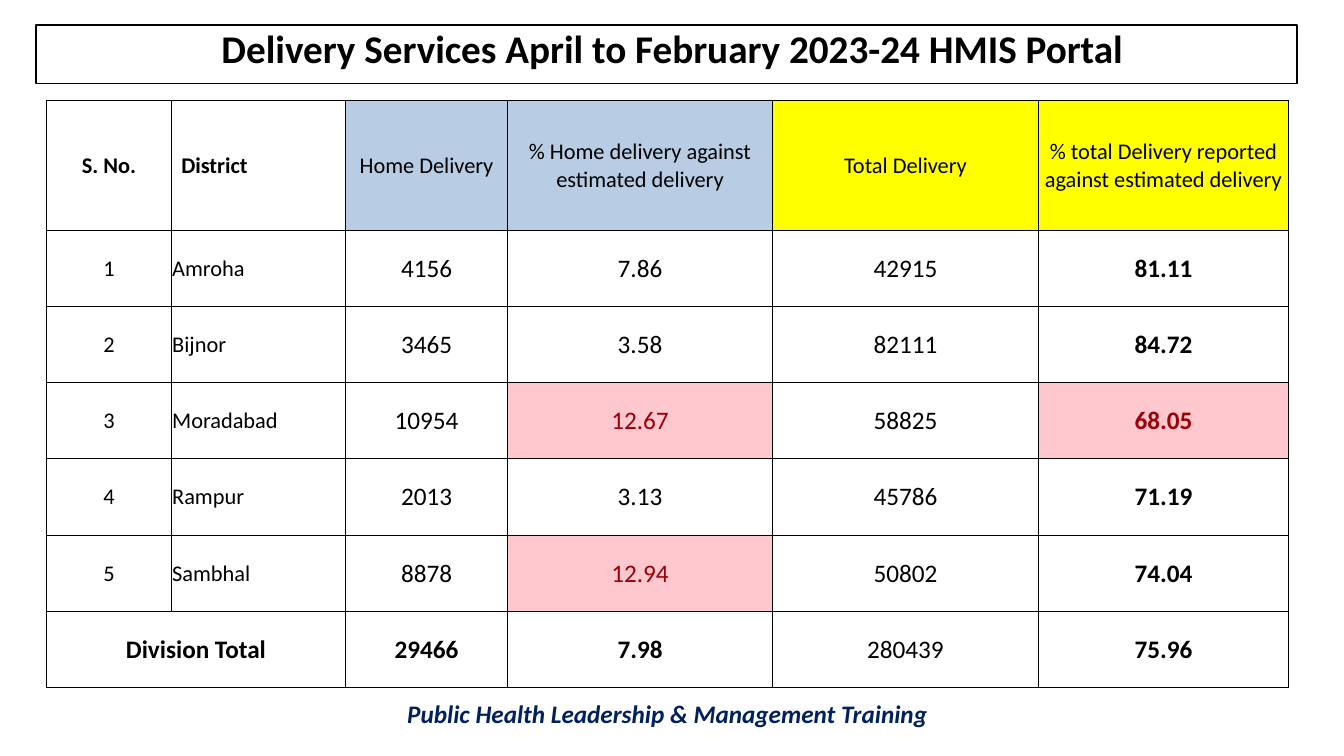
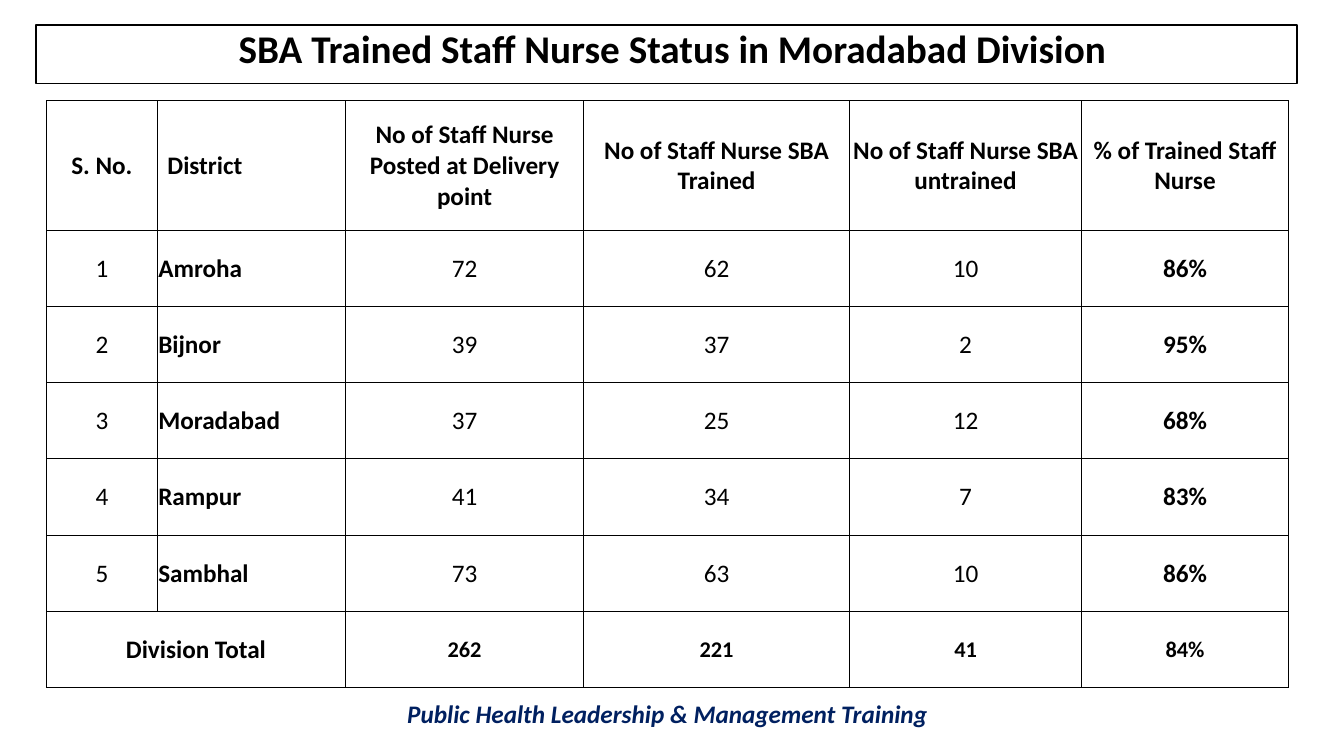
from lxml.etree import SubElement as Sub
from pptx import Presentation
from pptx.dml.color import RGBColor as Rgb
from pptx.enum.shapes import MSO_SHAPE as Shape
from pptx.enum.text import MSO_ANCHOR as Anchor, MSO_AUTO_SIZE as Fit, PP_ALIGN as Align
from pptx.oxml.ns import qn
from pptx.util import Cm, Pt

HUES = {"ink": "000000", "paper": "FFFFFF", "navy": "002060", "blue": "B8CCE4",
        "gold": "FFFF00", "pink": "FFC7CE", "red": "9C0006"}
FACE = "Calibri"
TITLE = (1.7, 0.43, 30.48, 1.7)
FRAME = (0.91, 0.63, 31.78, 1.47)
GRID = (1.17, 2.54, 31.3, 14.78)
FOOT = (1.17, 17.4, 31.3, 1.14)
HEAD = 3.26  # height of the header row
PAD = 0.02
TOTAL = "Division Total"
TOWNS = ["Amroha", "Bijnor", "Moradabad", "Rampur", "Sambhal"]


def hue(name):
    return Rgb.from_string(HUES[name])


def write(frame, text, size, bold=False, color="ink", align=Align.CENTER):
    """Fill a text frame with one styled paragraph."""
    frame.word_wrap = True
    para = frame.paragraphs[0]
    para.text = text
    para.alignment = align
    font = para.font
    font.name, font.size, font.bold = FACE, Pt(size), bold
    font.color.rgb = hue(color)
    return para


def add_title(slide, box, text):
    title = slide.shapes.title
    title.left, title.top, title.width, title.height = map(Cm, box)
    frame = title.text_frame
    frame.auto_size = Fit.NONE
    frame.vertical_anchor = Anchor.MIDDLE
    write(frame, text, 28, True).line_spacing = 0.9


def add_frame(slide, box):
    rect = slide.shapes.add_shape(Shape.RECTANGLE, *map(Cm, box))
    rect.shadow.inherit = False
    rect.fill.background()
    rect.line.color.rgb = hue("ink")
    rect.line.width = Pt(1)


def add_foot(slide, box):
    frame = slide.shapes.add_textbox(*map(Cm, box)).text_frame
    frame.vertical_anchor = Anchor.MIDDLE
    para = write(frame, "Public Health Leadership & Management Training", 18, True, "navy")
    para.font.italic = True


def edge(cell):
    """Draw thin lines on all four sides; call before the fill is set."""
    props = cell._tc.get_or_add_tcPr()
    for side in ("a:lnL", "a:lnR", "a:lnT", "a:lnB"):
        line = Sub(props, qn(side), w=str(Pt(0.5)))
        Sub(Sub(line, qn("a:solidFill")), qn("a:srgbClr"), val=HUES["ink"])


def add_grid(slide, box, widths, rows, style):
    """Place the table; style(row, col) gives size, bold, fill and text colour."""
    last = len(rows) - 1
    shape = slide.shapes.add_table(len(rows), len(widths), *map(Cm, box))
    table = shape.table
    table.first_row = table.horz_banding = False
    for col, width in zip(table.columns, widths):
        col.width = Cm(width)
    for r, row in enumerate(table.rows):
        row.height = Cm(HEAD if r == 0 else (box[3] - HEAD) / last)
    table.cell(last, 0).merge(table.cell(last, 1))
    for r, row in enumerate(rows):
        for c, text in enumerate(row):
            cell = table.cell(r, c)
            size, bold, fill, color = style(r, c)
            edge(cell)
            cell.fill.solid()
            cell.fill.fore_color.rgb = hue(fill)
            cell.vertical_anchor = Anchor.MIDDLE
            cell.margin_left = cell.margin_right = cell.margin_top = Cm(PAD)
            cell.margin_bottom = 0
            if text is None:  # covered by the merged cell
                continue
            town = c == 1
            if town and r == 0:
                cell.margin_left = Cm(0.25)
            write(cell.text_frame, text, size, bold, color,
                  Align.LEFT if town else Align.CENTER)


def add_page(deck, title, widths, heads, data, total, style):
    """Build one slide: title, frame, district table and footer."""
    slide = deck.slides.add_slide(deck.slide_layouts[5])
    add_title(slide, TITLE, title)
    add_frame(slide, FRAME)
    body = [[str(i), town, *vals] for i, (town, vals) in enumerate(zip(TOWNS, data), 1)]
    rows = [["S. No.", "District", *heads], *body, [TOTAL, None, *total]]
    add_grid(slide, GRID, widths, rows, style)
    add_foot(slide, FOOT)


def births(r, c):
    """Cell style of the delivery table."""
    if r == 0:
        fill = ("paper", "blue", "gold")[c // 2]
        return 16, c < 2, fill, "ink"
    if r == 6:
        return 18, c != 4, "paper", "ink"
    alert = (r, c) in {(3, 3), (3, 5), (5, 3)}
    fill, color = ("pink", "red") if alert else ("paper", "ink")
    return 16 if c < 2 else 18, c == 5, fill, color


def nurses(r, c):
    """Cell style of the staff nurse table."""
    size = 16 if r == 6 and c > 1 else 18
    return size, r in (0, 6) or c in (1, 5), "paper", "ink"


def main():
    deck = Presentation()
    deck.slide_width, deck.slide_height = Cm(33.87), Cm(19.05)
    add_page(
        deck, "Delivery Services April to February 2023-24 HMIS Portal",
        [3.15, 4.39, 4.08, 6.68, 6.7, 6.3],
        ["Home Delivery", "% Home delivery against estimated delivery",
         "Total Delivery", "% total Delivery reported against estimated delivery"],
        [["4156", "7.86", "42915", "81.11"],
         ["3465", "3.58", "82111", "84.72"],
         ["10954", "12.67", "58825", "68.05"],
         ["2013", "3.13", "45786", "71.19"],
         ["8878", "12.94", "50802", "74.04"]],
        ["29466", "7.98", "280439", "75.96"], births)
    add_page(
        deck, "SBA Trained Staff Nurse Status in Moradabad Division",
        [2.8, 4.74, 6, 6.7, 5.85, 5.21],
        ["No of Staff Nurse Posted at Delivery point", "No of Staff Nurse SBA Trained",
         "No of Staff Nurse SBA untrained", "% of Trained Staff Nurse"],
        [["72", "62", "10", "86%"],
         ["39", "37", "2", "95%"],
         ["37", "25", "12", "68%"],
         ["41", "34", "7", "83%"],
         ["73", "63", "10", "86%"]],
        ["262", "221", "41", "84%"], nurses)
    deck.save("out.pptx")


if __name__ == "__main__":
    main()
